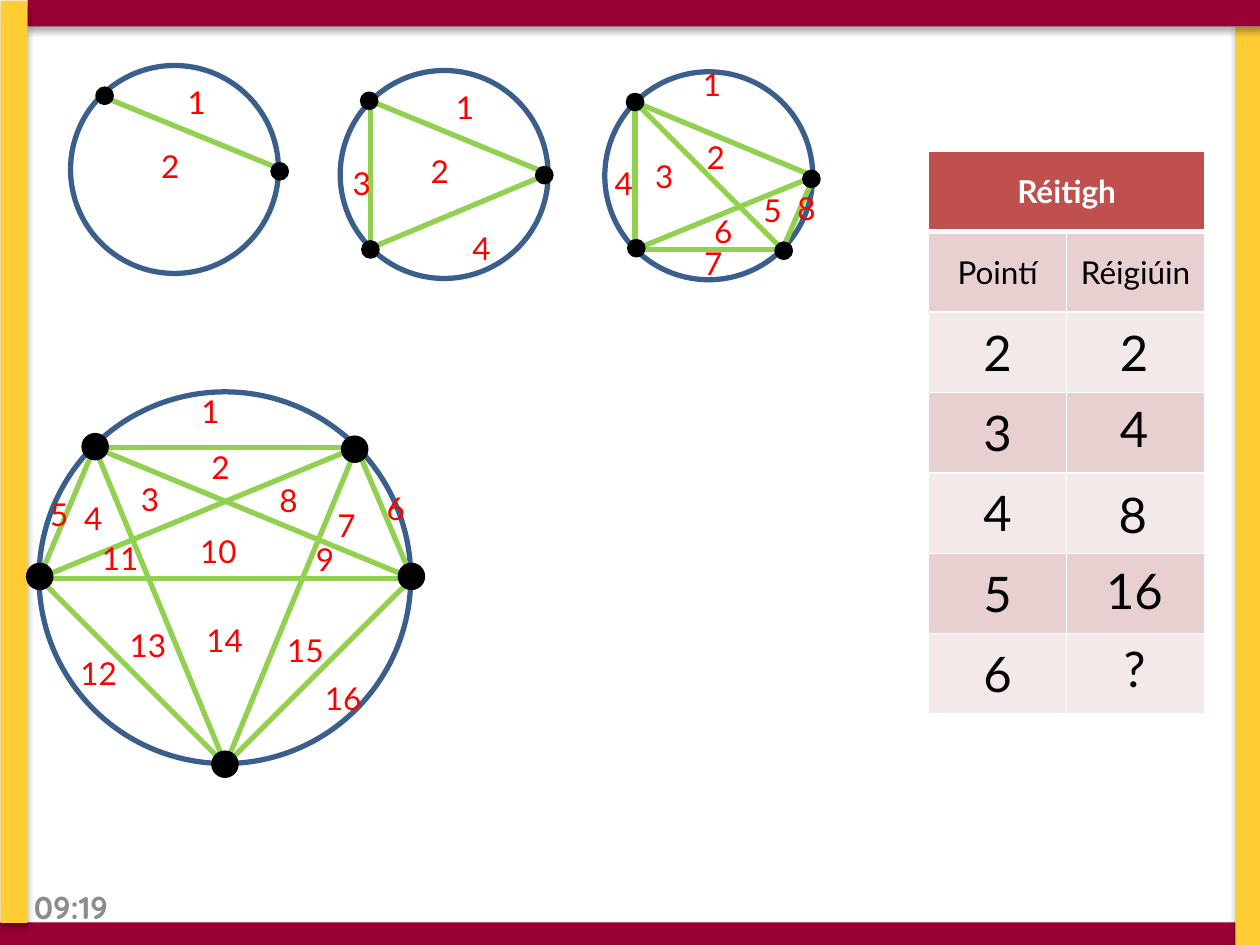
from lxml import etree
from pptx import Presentation
from pptx import util as u
from pptx.dml import color
from pptx.enum import shapes, text
from pptx.oxml import ns

GREEN, BLUE, RED, BLACK, WHITE = "92D050", "3A5F8C", "FF0000", "000000", "FFFFFF"
MAROON, GOLD = "990033", "FFCC33"

FRAME = [
    (0, 7.32, 10, 0, MAROON),
    (6.25, 3.77, 7.32, 90, GOLD),
    (0.22, 0, 9.8, 0, MAROON),
    (-3.55, 3.56, 7.32, 90, GOLD),
]

DIAGRAMS = [
    {
        "circle": (0.56, 0.52, 1.65),
        "points": [(0.8, 0.76), (2.22, 1.34)],
        "chords": [(0, 1)],
        "labels": [(1.39, 0.61), (1.18, 1.12)],
        "label_width": 0.39,
        "dots": [(0.77, 0.7), (2.16, 1.3)],
        "dot_size": 0.12,
    },
    {
        "circle": (2.7, 0.56, 1.65),
        "points": [(2.94, 0.8), (4.35, 1.38), (2.94, 1.97)],
        "chords": [(0, 1), (0, 2), (2, 1)],
        "labels": [(3.52, 0.65), (3.32, 1.16), (2.7, 1.25), (3.65, 1.77)],
        "label_width": 0.39,
        "dots": [(2.87, 0.74), (4.26, 1.33), (2.88, 1.92)],
        "dot_size": 0.12,
    },
    {
        "circle": (4.8, 0.57, 1.65),
        "points": [(5.04, 0.81), (6.46, 1.4), (6.21, 1.98), (5.04, 1.98)],
        "chords": [(0, 1), (0, 3), (2, 0), (3, 1), (2, 1), (3, 2)],
        "labels": [(5.48, 0.47), (5.51, 1.05), (5.1, 1.2), (4.78, 1.25),
                   (5.96, 1.47), (5.57, 1.63), (5.49, 1.89), (6.23, 1.45)],
        "label_width": 0.39,
        "dots": [(4.98, 0.75), (6.38, 1.36), (6.16, 1.93), (4.99, 1.91)],
        "dot_size": 0.12,
    },
    {
        "circle": (0.31, 3.11, 2.95),
        "points": [(0.75, 3.55), (2.83, 3.55), (3.27, 4.59), (1.79, 6.07), (0.31, 4.59)],
        "chords": [(0, 2), (0, 4), (0, 3), (0, 1), (4, 1),
                   (1, 3), (1, 2), (2, 4), (2, 3), (4, 3)],
        "labels": [(1.5, 3.06), (1.58, 3.51), (1.02, 3.76), (0.57, 3.91),
                   (0.3, 3.88), (2.97, 3.83), (2.58, 3.97), (2.12, 3.77),
                   (2.41, 4.24), (1.49, 4.17), (0.71, 4.23), (0.54, 5.14),
                   (0.93, 4.92), (1.54, 4.88), (2.18, 4.96), (2.48, 5.34)],
        "label_width": 0.64,
        "dots": [(0.66, 3.45), (2.72, 3.47), (3.17, 4.48), (1.69, 5.97), (0.22, 4.48)],
        "dot_size": 0.19,
    },
]

ROWS = [("Réitigh", ""), ("Pointí", "Réigiúin"),
        ("2", ""), ("3", ""), ("4", ""), ("5", ""), ("6", "")]

ANSWERS = [("2", 8.79, 2.51, 0.39), ("4", 8.79, 3.11, 0.39), ("8", 8.78, 3.8, 0.39),
           ("16", 8.68, 4.4, 0.66), ("?", 8.82, 5.02, 0.66)]


def rgb(value):
    return color.RGBColor.from_string(value)


def assign(target, values):
    for name, value in values.items():
        setattr(target, name, value)


def inches(*lengths):
    return [u.Inches(length) for length in lengths]


class Board:
    """Holds the text style and the current slide, and draws each kind of element."""

    def __init__(self, page, font="Lato"):
        self.page = page
        self.font = font

    def shape(self, kind, left, top, width, height, fill, line=None, weight=0):
        item = self.page.shapes.add_shape(kind, *inches(left, top, width, height))
        item.shadow.inherit = False
        item.fill.solid()
        item.fill.fore_color.rgb = rgb(fill)
        if line:
            item.line.color.rgb = rgb(line)
            item.line.width = u.Pt(weight)
        else:
            item.line.fill.background()
        return item

    def circle(self, left, top, size, fill, line, weight):
        return self.shape(shapes.MSO_SHAPE.OVAL, left, top, size, size, fill, line, weight)

    def bar(self, left, top, length, turn, fill):
        item = self.shape(shapes.MSO_SHAPE.RECTANGLE, left, top, length, 0.21, fill)
        item.rotation = turn
        effects = item._element.spPr.find(ns.qn("a:effectLst"))
        shadow = etree.SubElement(effects, ns.qn("a:outerShdw"), blurRad=str(u.Pt(3.5)),
                                  dist=str(u.Pt(2.2)), dir="5400000", rotWithShape="0")
        tint = etree.SubElement(shadow, ns.qn("a:srgbClr"), val=BLACK)
        etree.SubElement(tint, ns.qn("a:alpha"), val="32000")

    def chord(self, start, end):
        line = self.page.shapes.add_connector(
            shapes.MSO_CONNECTOR.STRAIGHT, *inches(*start, *end))
        line.line.color.rgb = rgb(GREEN)
        line.line.width = u.Pt(3)
        etree.SubElement(line._element.spPr, ns.qn("a:effectLst"))

    def add_words(self, para, words, size, ink, **extra):
        span = para.add_run()
        span.text = words
        assign(span.font, {"name": self.font, "size": u.Pt(size), "bold": False, **extra})
        span.font.color.rgb = rgb(ink)

    def label(self, words, left, top, width, height=0.4, size=18, ink=RED, frame=None, **extra):
        box = self.page.shapes.add_textbox(*inches(left, top, width, height))
        assign(box.text_frame, {"word_wrap": True,
                                "auto_size": text.MSO_AUTO_SIZE.SHAPE_TO_FIT_TEXT,
                                **(frame or {})})
        self.add_words(box.text_frame.paragraphs[0], words, size, ink, **extra)

    def diagram(self, circle, points, chords, labels, label_width, dots, dot_size):
        self.circle(*circle, WHITE, BLUE, 3)
        for start, end in chords:
            self.chord(points[start], points[end])
        for number, place in enumerate(labels, 1):
            self.label(str(number), *place, label_width)
        for place in dots:
            self.circle(*place, dot_size, BLACK, BLACK, 2)

    def border(self, side, weight):
        line = etree.Element(ns.qn(f"a:ln{side}"), w=str(u.Pt(weight)))
        fill = etree.SubElement(line, ns.qn("a:solidFill"))
        etree.SubElement(fill, ns.qn("a:srgbClr"), val=WHITE)
        return line

    def table(self, rows, left, top, width, height):
        grid = self.page.shapes.add_table(
            len(rows), len(rows[0]), *inches(left, top, width, height)).table
        assign(grid, {"first_row": False, "horz_banding": False})
        for index, row in enumerate(rows):
            fill = "C0504D" if index == 0 else ("F4E9E9", "E8D0D0")[index % 2]
            for column, words in enumerate(row):
                cell = grid.cell(index, column)
                cell.vertical_anchor = text.MSO_ANCHOR.MIDDLE
                cell.fill.solid()
                cell.fill.fore_color.rgb = rgb(fill)
                weights = {"L": 1, "R": 1, "T": 3 if index == 1 else 1,
                           "B": 3 if index == 0 else 1}
                for place, (side, weight) in enumerate(weights.items()):
                    cell._tc.tcPr.insert(place, self.border(side, weight))
                if words:
                    para = cell.text_frame.paragraphs[0]
                    para.alignment = text.PP_ALIGN.CENTER
                    self.add_words(para, words, 18 if index < 2 else 28,
                                   BLACK if index else WHITE, bold=index == 0)
        grid.cell(0, 0).merge(grid.cell(0, 1))


def main():
    deck = Presentation()
    assign(deck, {"slide_width": u.Inches(10), "slide_height": u.Inches(7.5)})
    board = Board(deck.slides.add_slide(deck.slide_layouts[6]))
    for bar in FRAME:
        board.bar(*bar)
    for diagram in DIAGRAMS:
        board.diagram(**diagram)
    board.table(ROWS, 7.37, 1.2, 2.19, 4.47)
    for answer in ANSWERS:
        board.label(*answer, height=0.57, size=28, ink=BLACK)
    board.label("09:19", 0.17, 7, 0.93, ink="8C8C8C", name="Quicksand", bold=True,
                frame={"auto_size": text.MSO_AUTO_SIZE.NONE,
                       "vertical_anchor": text.MSO_ANCHOR.MIDDLE})
    deck.save("out.pptx")


if __name__ == "__main__":
    main()
